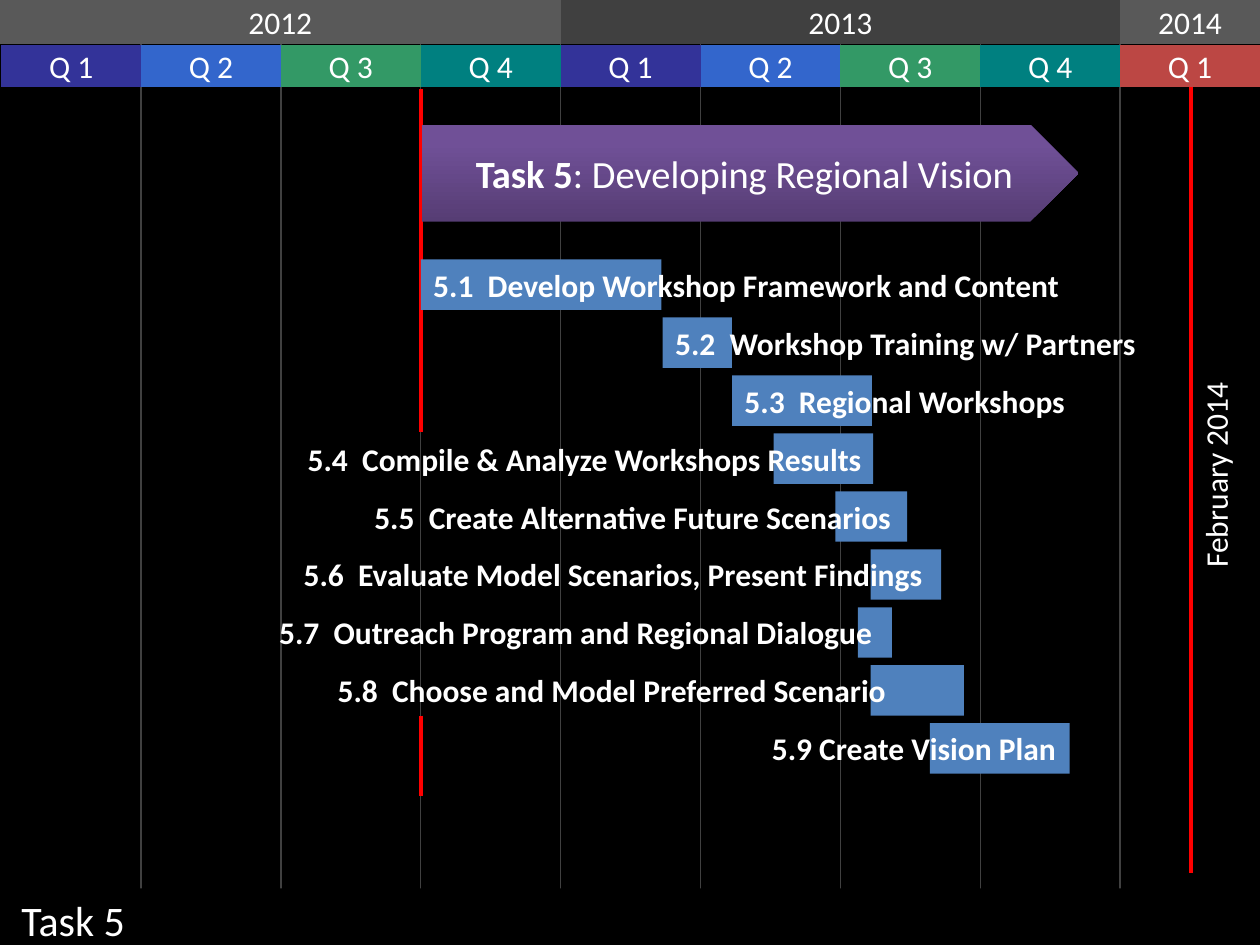
from pptx import Presentation
from pptx.util import Inches, Pt
from pptx.dml.color import RGBColor
from pptx.enum.shapes import MSO_SHAPE, MSO_CONNECTOR
from pptx.enum.text import PP_ALIGN, MSO_ANCHOR, MSO_AUTO_SIZE
from pptx.oxml.ns import qn
from lxml.etree import SubElement

theme = {
    "font": "Calibri", "body": 18, "task": 22, "title": 24,
    "back": "000000", "text": "FFFFFF", "grid": "404040", "mark": "FF0000",
    "bar": "4F81BD", "even": "595959", "odd": "404040",
    "arrow": ("563D74", "705097"),
    "quarters": ("333399", "3366CC", "339966", "008080"), "last": "BC4744",
}


def color(name):
    return RGBColor.from_string(theme.get(name, name))


def write(shape, text, size="body", align=PP_ALIGN.LEFT,
          anchor=MSO_ANCHOR.TOP, bold=False, left=0.1):
    frame = shape.text_frame
    frame.text = text
    frame.word_wrap = True
    frame.auto_size = MSO_AUTO_SIZE.NONE
    frame.vertical_anchor = anchor
    frame.margin_left = Inches(left)
    para = frame.paragraphs[0]
    para.alignment = align
    for run in para.runs:
        run.font.name = theme["font"]
        run.font.size = Pt(theme[size])
        run.font.bold = bold
        run.font.color.rgb = color("text")


deck = Presentation()
deck.slide_width, deck.slide_height = Inches(10), Inches(7.5)
slide = deck.slides.add_slide(deck.slide_layouts[5])
slide.background.fill.solid()
slide.background.fill.fore_color.rgb = color("back")
shapes = slide.shapes

# Quarter grid: every quarter is equally wide
start, step = 0.01, 1.11
edges = [start + step * i for i in range(9)]

# Grid lines, then the red start and end marks
lines = [(x, 0.35, 7.5, "grid", 0.75) for x in edges[1:]]
lines += [(edges[3], 0.71, 3.43, "mark", 2.25),
          (edges[3], 5.68, 6.32, "mark", 2.25),
          (9.45, 0.69, 6.93, "mark", 2.25)]
for x, top, end, tone, width in lines:
    line = shapes.add_connector(MSO_CONNECTOR.STRAIGHT, Inches(x), Inches(top),
                                Inches(x), Inches(end))
    line.line.color.rgb = color(tone)
    line.line.width = Pt(width)
    SubElement(line._element.spPr, qn("a:effectLst"))

# Title along the foot, in front of the grid lines
title = shapes.title
title.left, title.top = Inches(0), Inches(7.05)
title.width, title.height = Inches(10), Inches(0.51)
title.fill.solid()
title.fill.fore_color.rgb = color("back")
write(title, "Task 5", "title", left=0.17)
title.element.getparent().append(title.element)

# Year and quarter header
cells = [("2012", 0, 0, 4.45, 0.35, "even"),
         ("2013", edges[4], 0, 4 * step, 0.35, "odd"),
         ("2014", edges[8], 0, step, 0.35, "even")]
for i, x in enumerate(edges):
    tone = theme["last"] if i == 8 else theme["quarters"][i % 4]
    cells.append((f"Q {i % 4 + 1}", x, 0.36, step, 0.33, tone))
for text, x, y, width, height, tone in cells:
    cell = shapes.add_shape(MSO_SHAPE.FLOWCHART_PROCESS, Inches(x), Inches(y),
                            Inches(width), Inches(height))
    cell.shadow.inherit = False
    cell.fill.solid()
    cell.fill.fore_color.rgb = color(tone)
    cell.line.fill.background()
    write(cell, text, align=PP_ALIGN.CENTER, anchor=MSO_ANCHOR.MIDDLE)

# End date, read upwards beside its mark
date = shapes.add_textbox(Inches(7.9), Inches(2.73), Inches(3.49), Inches(0.4))
date.rotation = 270
write(date, "February 2014", left=0.17)

# Task arrow
arrow = shapes.add_shape(MSO_SHAPE.PENTAGON, Inches(3.35), Inches(0.99),
                         Inches(5.21), Inches(0.77))
arrow.shadow.inherit = False
arrow.line.fill.background()
arrow.fill.gradient()
arrow.fill.gradient_angle = 90
for stop, tone, place in zip(arrow.fill.gradient_stops, theme["arrow"], (0, 0.8)):
    stop.color.rgb = color(tone)
    stop.position = place
write(arrow, "Task 5", "task", PP_ALIGN.CENTER, MSO_ANCHOR.MIDDLE, True, 0.13)
arrow.text_frame.margin_right = Inches(0.03)
rest = arrow.text_frame.paragraphs[0].add_run()
rest.text = ": Developing Regional Vision"
rest.font.name = theme["font"]
rest.font.size = Pt(theme["task"])
rest.font.bold = False
rest.font.color.rgb = color("text")

# Steps: bar left, bar width, label left, label width, side, label
L, R = PP_ALIGN.LEFT, PP_ALIGN.RIGHT
steps = [
    (3.34, 1.91, 3.34, 6.57, L, "5.1  Develop Workshop Framework and Content"),
    (5.26, 0.55, 5.26, 3.88, L, "5.2  Workshop Training w/ Partners"),
    (5.81, 1.11, 5.81, 4.19, L, "5.3  Regional Workshops"),
    (6.14, 0.79, 0.33, 6.61, R, "5.4  Compile & Analyze Workshops Results"),
    (6.63, 0.57, 1.38, 5.85, R, "5.5  Create Alternative Future Scenarios "),
    (6.91, 0.56, 1.37, 6.11, R, "5.6  Evaluate Model Scenarios, Present Findings "),
    (6.81, 0.27, 1.93, 5.15, R, "5.7  Outreach Program and Regional Dialogue "),
    (6.91, 0.74, 2.48, 4.71, R, "5.8  Choose and Model Preferred Scenario "),
    (7.38, 1.11, 2.48, 6.00, R, "5.9 Create Vision Plan"),
]
for i, (x, width, left, span, side, text) in enumerate(steps):
    y = Inches(2.06 + 0.46 * i)
    bar = shapes.add_shape(MSO_SHAPE.RECTANGLE, Inches(x), y,
                           Inches(width), Inches(0.4))
    bar.shadow.inherit = False
    bar.fill.solid()
    bar.fill.fore_color.rgb = color("bar")
    bar.line.fill.background()
    label = shapes.add_textbox(Inches(left), y, Inches(span), Inches(0.4))
    write(label, text, align=side, bold=True)

deck.save("out.pptx")
